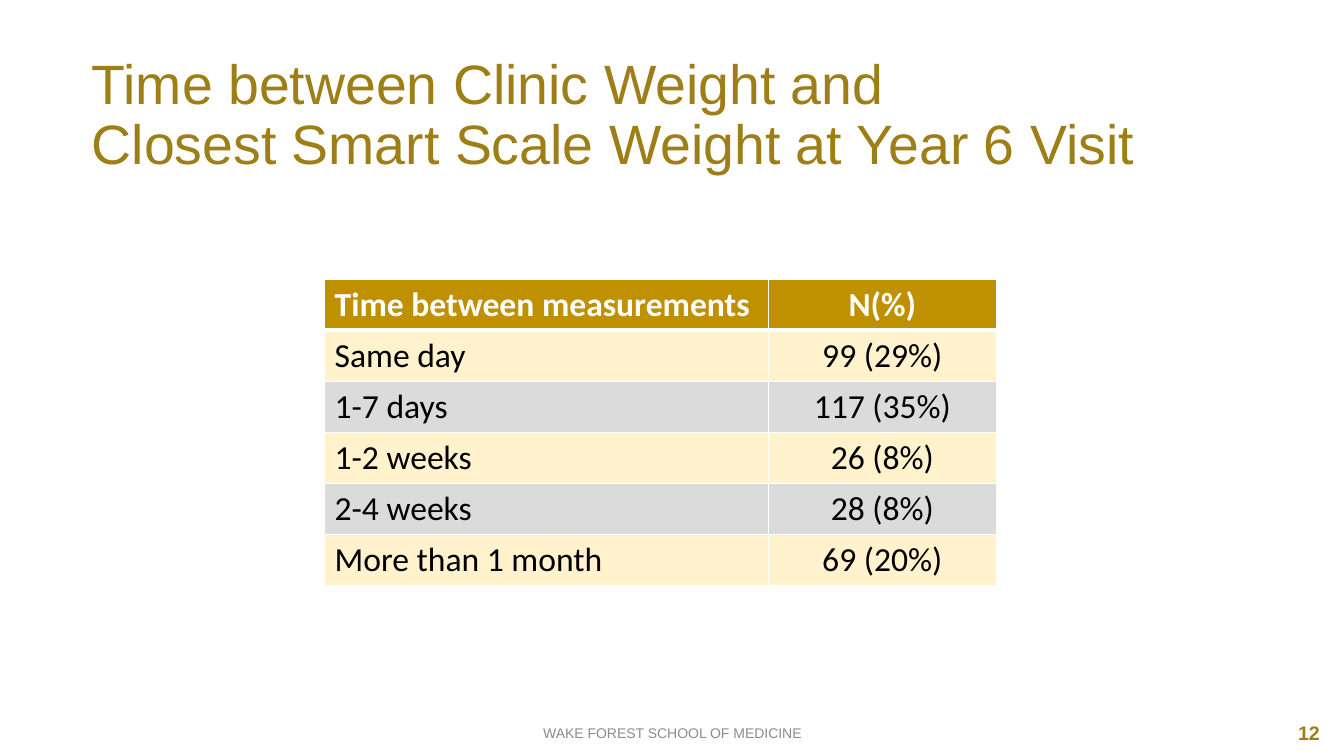
from lxml import etree
from pptx import Presentation, util as u
from pptx.dml.color import RGBColor
from pptx.enum import text
from pptx.oxml import ns

GOLD, HEADER, CREAM, SILVER = "9E7E16", "BF9000", "FFF2CC", "DBDBDB"
WHITE, BLACK, GREY = "FFFFFF", "000000", "8C8C8C"
LEFT, CENTER, RIGHT = text.PP_ALIGN.LEFT, text.PP_ALIGN.CENTER, text.PP_ALIGN.RIGHT
WIDTH, HEIGHT = 13.33, 7.5
COLUMNS, ROWS = 40, 30


def color(value):
    return RGBColor.from_string(value)


class Deck:
    heading_font = "Arial"
    table_font = "Calibri"

    def __init__(self):
        self.show = Presentation()
        self.show.slide_width = u.Inches(WIDTH)
        self.show.slide_height = u.Inches(HEIGHT)
        self.slide = self.show.slides.add_slide(self.show.slide_layouts[5])

    def place(self, column, row, columns, rows):
        across, down = WIDTH / COLUMNS, HEIGHT / ROWS
        return [u.Inches(n) for n in
                (column * across, row * down, columns * across, rows * down)]

    def style(self, paragraph, font, size, hue, align, bold=False):
        paragraph.alignment = align
        paragraph.font.name = font
        paragraph.font.size = u.Pt(size)
        paragraph.font.bold = bold
        paragraph.font.color.rgb = color(hue)

    def fill_frame(self, frame, words, size, hue, align, bold=False):
        frame.word_wrap = True
        frame.auto_size = text.MSO_AUTO_SIZE.NONE
        frame.vertical_anchor = text.MSO_ANCHOR.MIDDLE
        frame.text = words
        self.style(frame.paragraphs[0], self.heading_font, size, hue, align, bold)

    def title(self, words, area):
        heading = self.slide.shapes.title
        heading.left, heading.top, heading.width, heading.height = self.place(*area)
        self.fill_frame(heading.text_frame, words, 39.6, GOLD, LEFT)
        heading.text_frame.paragraphs[0].line_spacing = 0.9

    def label(self, words, area, *look):
        box = self.slide.shapes.add_textbox(*self.place(*area))
        self.fill_frame(box.text_frame, words, *look)

    def borders(self, cell, top, bottom):
        properties = cell._tc.get_or_add_tcPr()
        for side, points in (("L", 1), ("R", 1), ("T", top), ("B", bottom)):
            line = etree.SubElement(properties, ns.qn("a:ln" + side), w=str(u.Pt(points)))
            paint = etree.SubElement(line, ns.qn("a:solidFill"))
            etree.SubElement(paint, ns.qn("a:srgbClr"), val=WHITE)

    def table(self, records, area, shares):
        left, top, width, height = self.place(*area)
        grid = self.slide.shapes.add_table(
            len(records), len(shares), left, top, width, height).table
        for column, share in zip(grid.columns, shares):
            column.width = int(width * share)
        for r, record in enumerate(records):
            header = r == 0
            band = HEADER if header else (SILVER, CREAM)[r % 2]
            for c, words in enumerate(record):
                cell = grid.cell(r, c)
                self.borders(cell, 3 if r == 1 else 1, 3 if header else 1)
                cell.fill.solid()
                cell.fill.fore_color.rgb = color(band)
                cell.text = words
                self.style(cell.text_frame.paragraphs[0], self.table_font, 24,
                           WHITE if header else BLACK, CENTER if c else LEFT, header)


def main():
    deck = Deck()
    deck.title("Time between Clinic Weight and\vClosest Smart Scale Weight at Year 6 Visit",
               (2.43, 2.2, 33.52, 4.84))
    deck.table([
        ("Time between measurements", "N(%)"),
        ("Same day", "99 (29%)"),
        ("1-7 days", "117 (35%)"),
        ("1-2 weeks", "26 (8%)"),
        ("2-4 weeks", "28 (8%)"),
        ("More than 1 month", "69 (20%)"),
    ], (9.66, 11.08, 20, 12), (0.66, 0.34))
    deck.label("12", (30.58, 28.28, 9, 1.6), 14, GOLD, RIGHT, True)
    deck.label("WAKE FOREST SCHOOL OF MEDICINE", (13.26, 28.28, 13.5, 1.6), 10, GREY, CENTER)
    deck.show.save("out.pptx")


if __name__ == "__main__":
    main()
